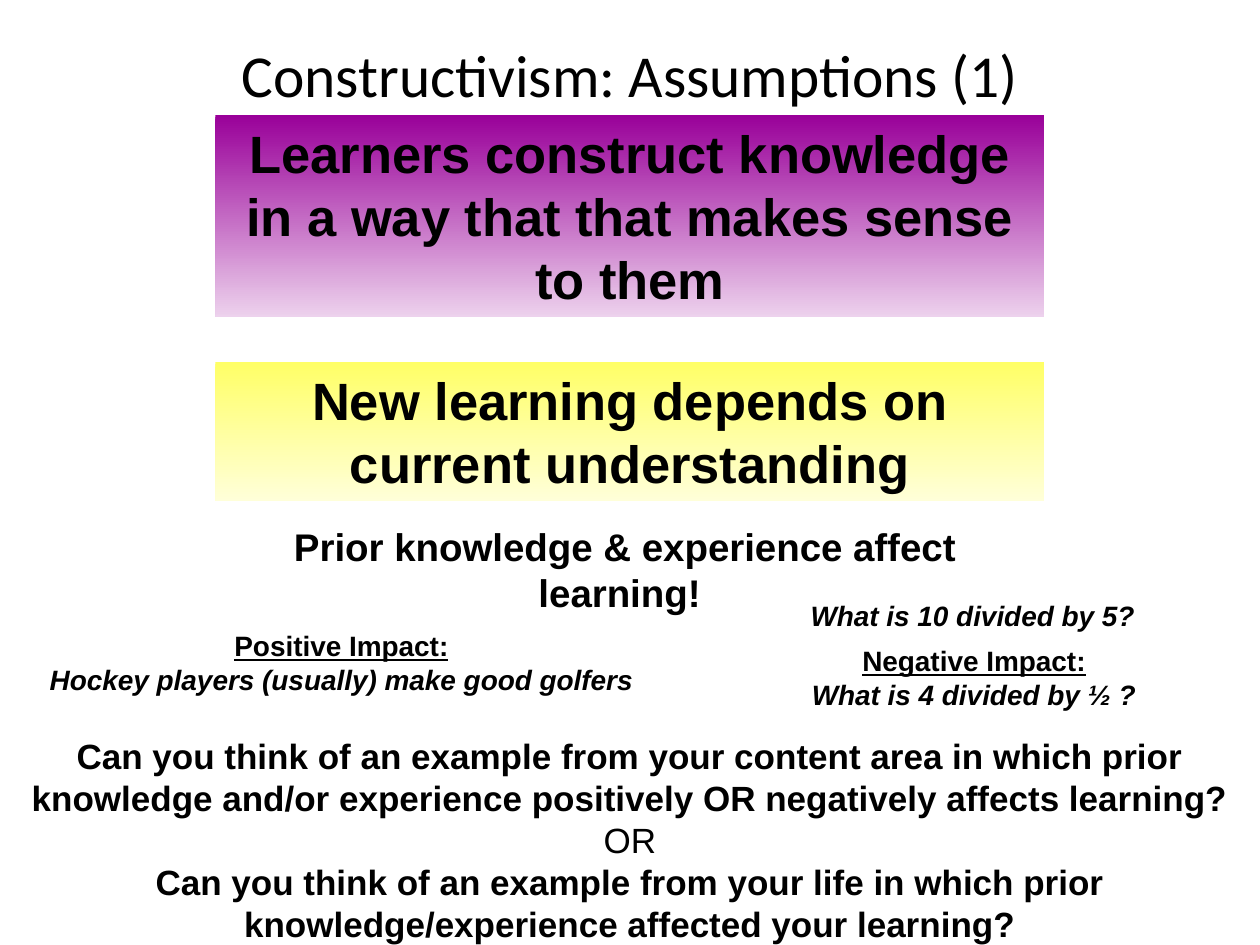
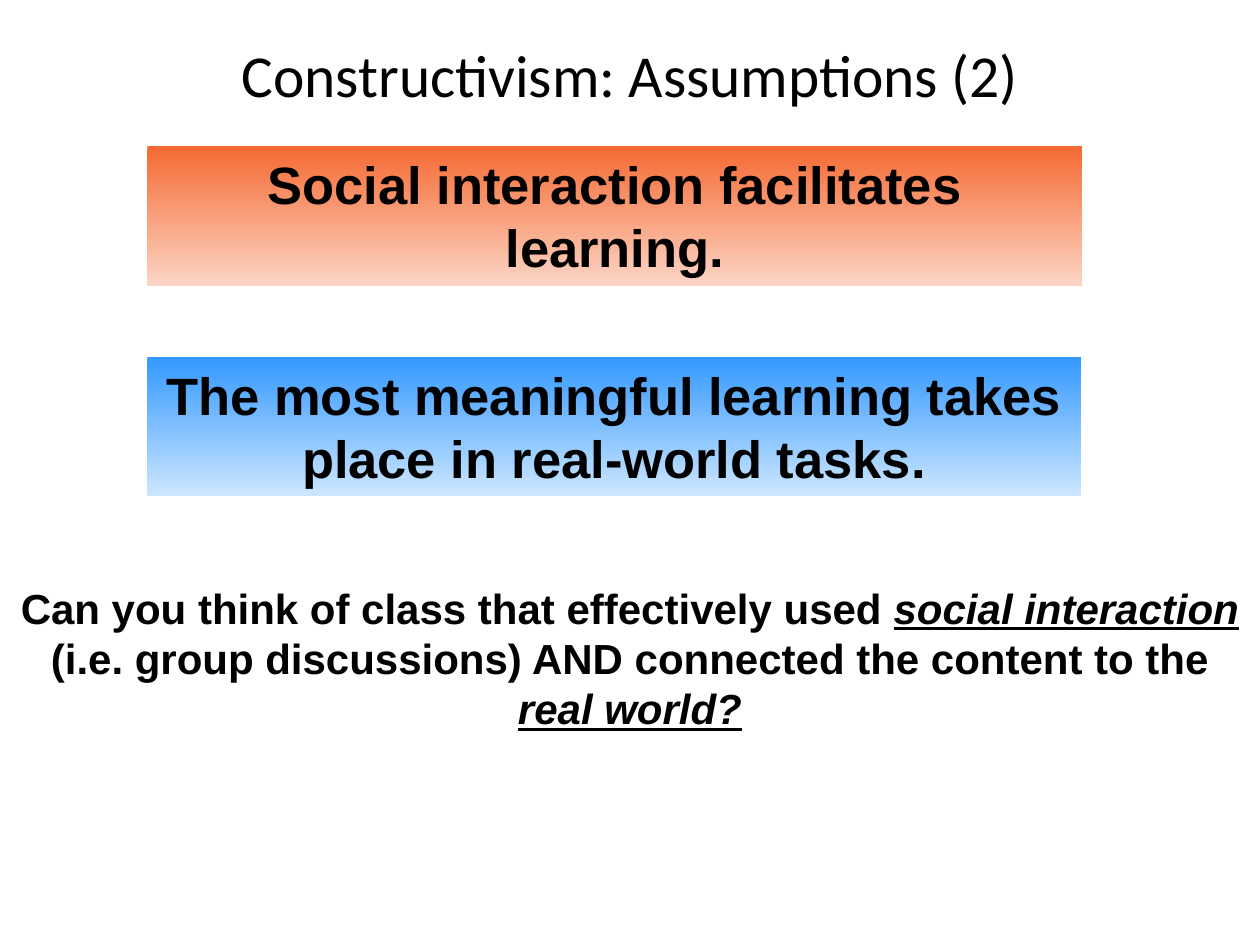
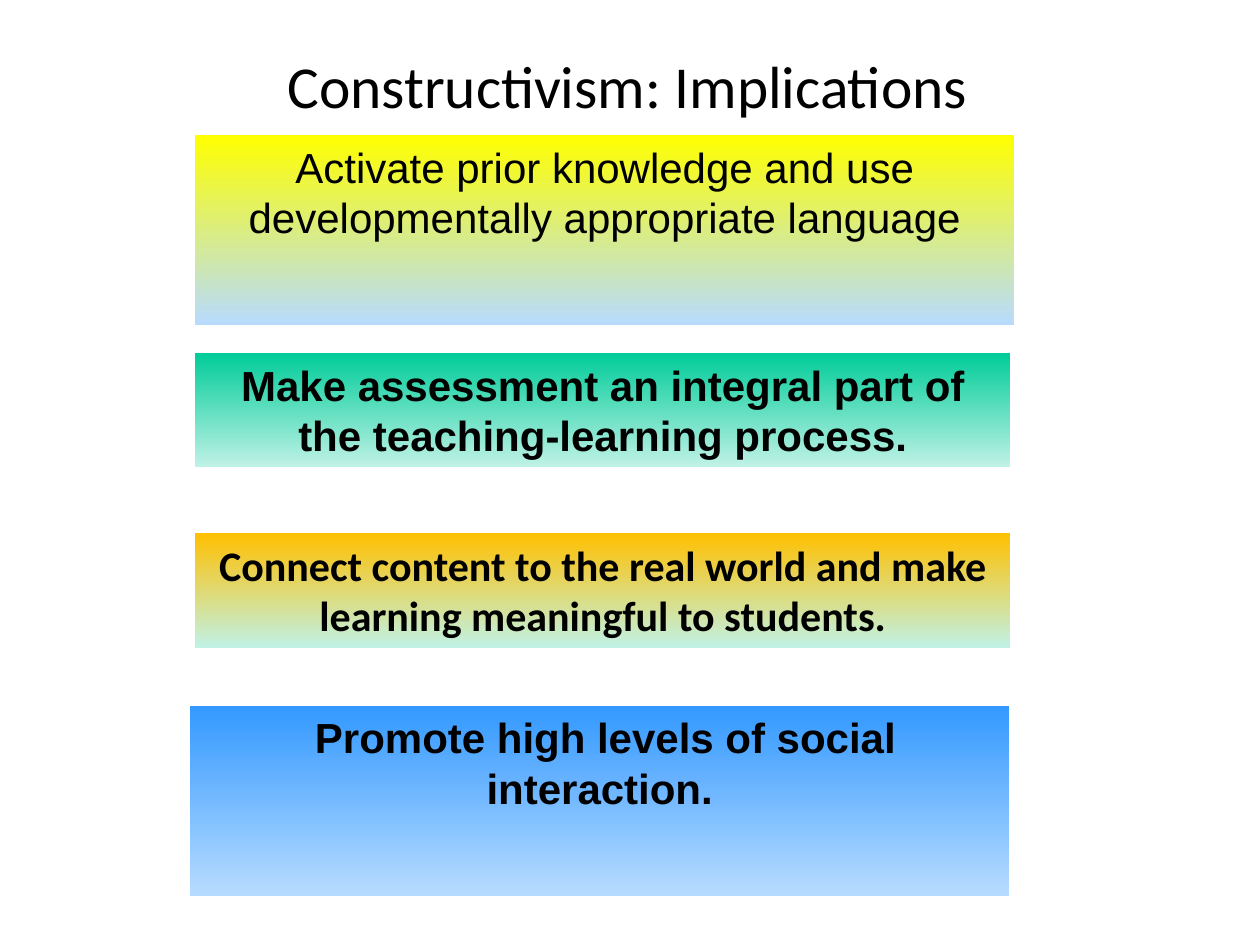
"""Build three slides on the assumptions and implications of constructivism."""
from pptx import Presentation
from pptx.dml.color import RGBColor
from pptx.enum.shapes import MSO_SHAPE
from pptx.enum.text import MSO_ANCHOR, PP_ALIGN
from pptx.util import Inches, Pt

RECTANGLE = MSO_SHAPE.RECTANGLE
CENTER = PP_ALIGN.CENTER
TOP, MIDDLE = MSO_ANCHOR.TOP, MSO_ANCHOR.MIDDLE
BLACK = "000000"
HEADING_FONT, BODY_FONT = "Calibri", "Arial"
TITLE_SIZE = 34
TITLE_BOX = (0, 0, 10, 1.17)

# Runs are (text, style letters): b bold, i italic, u underlined.
SLIDES = [
    {
        "title": "Constructivism: Assumptions (1)",
        "band_size": 30,
        "bands": [
            ((1.71, 2.87, 6.58, 1.11), ("FFFF66", "FFFFD9"), BODY_FONT,
             [("New learning depends on current understanding", "b")]),
            ((1.71, 0.91, 6.58, 1.61), ("990099", "EDD2ED"), BODY_FONT,
             [("Learners construct knowledge in a way that that makes sense to them", "b")]),
        ],
        "notes": [
            ((1.92, 4.1, 6.08, 0.84), 22,
             [[("Prior knowledge & experience affect learning! ", "b")]]),
            ((0.17, 4.94, 5.08, 0.64), 16,
             [[("Positive Impact:", "bu")],
              [("Hockey players (usually) make good golfers", "bi")]]),
            ((0, 5.78, 10, 1.78), 20,
             [[("Can you think of an example from your content area in which prior "
                "knowledge and/or experience positively OR negatively affects learning? ", "b"),
               ("OR", "")],
              [("Can you think of an example from your life in which prior "
                "knowledge/experience affected your learning?", "b")]]),
            ((5.68, 4.7, 4.08, 0.37), 16, [[("What is 10 divided by 5?", "bi")]]),
            ((5.69, 5.06, 4.08, 0.64), 16,
             [[("Negative Impact:", "bu")], [("What is 4 divided by ½ ?", "bi")]]),
        ],
    },
    {
        "title": "Constructivism: Assumptions (2)",
        "band_size": 30,
        "bands": [
            ((1.17, 1.16, 7.42, 1.11), ("F56A33", "FCD5C5"), BODY_FONT,
             [("Social interaction facilitates learning.", "b")]),
            ((1.17, 2.83, 7.41, 1.11), ("3399FF", "CDE6FF"), BODY_FONT,
             [("The most meaningful learning takes place in real-world tasks.", "b")]),
        ],
        "notes": [
            ((0, 4.57, 10, 1.31), 24,
             [[("Can you think of class that effectively used ", "b"),
               ("social interaction", "biu"),
               (" (i.e. group discussions) AND connected the content to the ", "b"),
               ("real world?", "biu")]]),
        ],
    },
    {
        "title": "Constructivism: Implications",
        "title_box": (-0.02, -0.04, 10, 1.42),
        "band_size": 24,
        "bands": [
            ((1.51, 5.6, 6.5, 1.51), ("3399FF", "B7DBFF"), BODY_FONT,
             [(" ", ""), ("Promote high levels of social interaction.", "b")]),
            ((1.55, 2.8, 6.47, 0.91), ("00CC99", "C0F2E6"), BODY_FONT,
             [("Make assessment an integral part of the teaching-learning process.", "b")]),
            ((1.55, 4.23, 6.47, 0.91), ("FFC000", "C0F2E6"), HEADING_FONT,
             [("Connect content to the real world and make learning meaningful to students.", "b")]),
            ((1.55, 1.07, 6.5, 1.51), ("FFFF00", "B7DBFF"), BODY_FONT,
             [("Activate prior knowledge and use developmentally appropriate language", "")]),
        ],
        "notes": [],
    },
]


def color(value):
    return RGBColor.from_string(value)


def inches(box):
    return [Inches(length) for length in box]


def write(shape, paragraphs, size, font_name, anchor=TOP):
    frame = shape.text_frame
    frame.word_wrap = True
    frame.vertical_anchor = anchor
    for index, runs in enumerate(paragraphs):
        paragraph = frame.add_paragraph() if index else frame.paragraphs[0]
        paragraph.alignment = CENTER
        paragraph.font.size = Pt(size)
        paragraph.font.name = font_name
        paragraph.font.color.rgb = color(BLACK)
        for text, style in runs:
            run = paragraph.add_run()
            run.text = text
            run.font.bold = "b" in style
            run.font.italic = "i" in style
            run.font.underline = "u" in style


def add_title(slide, text, box):
    title = slide.shapes.title
    title.left, title.top, title.width, title.height = inches(box)
    write(title, [[(text, "")]], TITLE_SIZE, HEADING_FONT, MIDDLE)


def add_band(slide, box, gradient, font_name, runs, size):
    band = slide.shapes.add_shape(RECTANGLE, *inches(box))
    band.shadow.inherit = False
    band.line.fill.background()
    band.fill.gradient()
    band.fill.gradient_angle = 270
    for stop, value in zip(band.fill.gradient_stops, gradient):
        stop.color.rgb = color(value)
    write(band, [runs], size, font_name)


def main():
    presentation = Presentation()
    presentation.slide_width, presentation.slide_height = Inches(10), Inches(7.5)
    title_only = presentation.slide_layouts[5]
    for content in SLIDES:
        slide = presentation.slides.add_slide(title_only)
        add_title(slide, content["title"], content.get("title_box", TITLE_BOX))
        for band in content["bands"]:
            add_band(slide, *band, content["band_size"])
        for box, size, paragraphs in content["notes"]:
            write(slide.shapes.add_textbox(*inches(box)), paragraphs, size, BODY_FONT)
    presentation.save("out.pptx")


if __name__ == "__main__":
    main()
